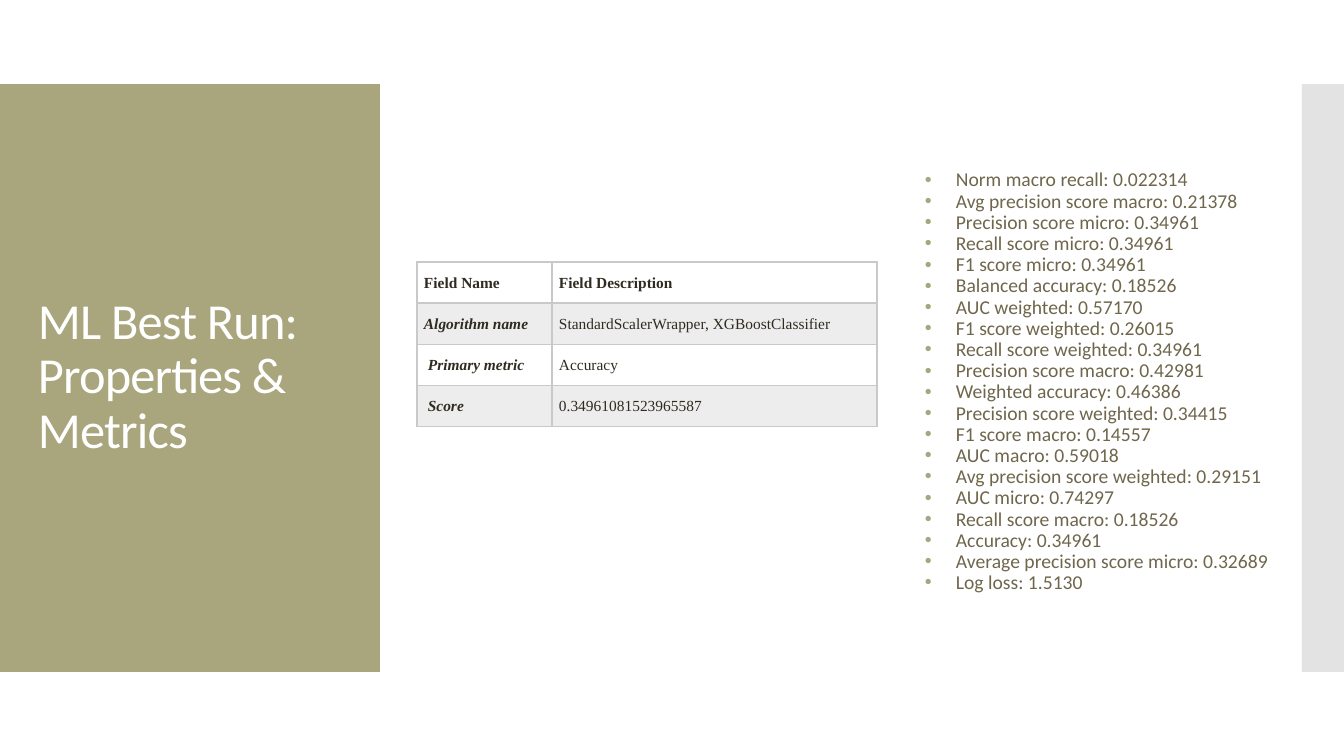
import lxml.etree
import pptx
import pptx.dml.color
import pptx.enum.shapes
import pptx.enum.text
import pptx.oxml.ns
import pptx.util

EMU_PER_PX = 914400 / 100.8
COLOURS = {
    "olive": "A9A57C",
    "strip": "C8C8C8",
    "title": "FFFFFF",
    "metric": "6F664C",
    "table_text": "2F2B20",
    "band": "EDEDED",
    "border": "C9C9C9",
}
PROPERTIES = [
    ("Field Name", "Field Description"),
    ("Algorithm name", "StandardScalerWrapper, XGBoostClassifier"),
    (" Primary metric", "Accuracy"),
    (" Score", "0.34961081523965587"),
]
METRICS = [
    "Norm macro recall: 0.022314",
    "Avg precision score macro: 0.21378",
    "Precision score micro: 0.34961",
    "Recall score micro: 0.34961",
    "F1 score micro: 0.34961",
    "Balanced accuracy: 0.18526",
    "AUC weighted: 0.57170",
    "F1 score weighted: 0.26015",
    "Recall score weighted: 0.34961",
    "Precision score macro: 0.42981",
    "Weighted accuracy: 0.46386",
    "Precision score weighted: 0.34415",
    "F1 score macro: 0.14557",
    "AUC macro: 0.59018",
    "Avg precision score weighted: 0.29151",
    "AUC micro: 0.74297",
    "Recall score macro: 0.18526",
    "Accuracy: 0.34961",
    "Average precision score micro: 0.32689",
    "Log loss: 1.5130",
]


def px(length):
    return pptx.util.Emu(round(length * EMU_PER_PX))


def colour(name):
    return pptx.dml.color.RGBColor.from_string(COLOURS[name])


def add_element(parent, tag, **attributes):
    element = lxml.etree.SubElement(parent, pptx.oxml.ns.qn(tag))
    for key, value in attributes.items():
        element.set(key, str(value))
    return element


def add_panel(slide, left, top, width, height, fill, opacity=100):
    shape = slide.shapes.add_shape(
        pptx.enum.shapes.MSO_SHAPE.RECTANGLE, px(left), px(top), px(width), px(height)
    )
    shape.shadow.inherit = False
    shape.fill.solid()
    shape.fill.fore_color.rgb = colour(fill)
    shape.line.fill.background()
    if opacity < 100:
        fill_colour = shape._element.spPr.find(".//" + pptx.oxml.ns.qn("a:srgbClr"))
        add_element(fill_colour, "a:alpha", val=opacity * 1000)


def format_font(font, name, size, fill, bold=False, italic=False):
    font.name = name
    font.size = pptx.util.Pt(size)
    font.color.rgb = colour(fill)
    font.bold = bold
    font.italic = italic


def add_text(slide, left, top, width, height, text, size, fill):
    shape = slide.shapes.add_textbox(px(left), px(top), px(width), px(height))
    text_frame = shape.text_frame
    text_frame.word_wrap = True
    text_frame.vertical_anchor = pptx.enum.text.MSO_ANCHOR.MIDDLE
    text_frame.text = text
    for paragraph in text_frame.paragraphs:
        paragraph.line_spacing = 0.9
        for run in paragraph.runs:
            format_font(run.font, "Calibri", size, fill)
    return text_frame


def add_title(slide):
    text_frame = add_text(
        slide, 28, 124, 325, 507, "ML Best Run: Properties & Metrics", 36, "title"
    )
    text_frame.paragraphs[0].runs[0]._r.get_or_add_rPr().set("spc", "-60")


def add_metrics(slide):
    text_frame = add_text(slide, 899, 100, 383, 564, "\n".join(METRICS), 14, "metric")
    for index, paragraph in enumerate(text_frame.paragraphs):
        paragraph.space_before = pptx.util.Pt(0 if index else 12)
        properties = paragraph._p.get_or_add_pPr()
        properties.set("marL", str(px(47)))
        properties.set("indent", str(px(-31)))
        bullet_colour = add_element(properties, "a:buClr")
        add_element(bullet_colour, "a:srgbClr", val=COLOURS["olive"])
        add_element(properties, "a:buFont", typeface="Arial")
        add_element(properties, "a:buChar", char="•")


def set_borders(cell, row):
    properties = cell._tc.get_or_add_tcPr()
    widths = {"L": 1, "R": 1, "T": 1.5 if row == 1 else 1, "B": 1.5 if row == 0 else 1}
    for position, (side, width) in enumerate(widths.items()):
        line = add_element(properties, "a:ln" + side, w=pptx.util.Pt(width))
        line_fill = add_element(line, "a:solidFill")
        add_element(line_fill, "a:srgbClr", val=COLOURS["border"])
        properties.insert(position, line)


def fill_cell(cell, row, column, text):
    cell.margin_left = cell.margin_right = px(7)
    cell.margin_top = cell.margin_bottom = px(10)
    if row % 2:
        cell.fill.solid()
        cell.fill.fore_color.rgb = colour("band")
    else:
        cell.fill.background()
    set_borders(cell, row)
    cell.text_frame.text = text
    paragraph = cell.text_frame.paragraphs[0]
    paragraph.line_spacing = 1.15
    paragraph.space_before = pptx.util.Pt(12)
    is_header = row == 0
    is_name = column == 0
    format_font(
        paragraph.runs[0].font,
        "Times New Roman",
        11,
        "table_text",
        bold=is_header or is_name,
        italic=is_name and not is_header,
    )


def add_properties_table(slide):
    column_widths = [135, 325]
    row_height = 40
    table = slide.shapes.add_table(
        len(PROPERTIES),
        len(column_widths),
        px(417),
        px(262),
        px(sum(column_widths)),
        px(row_height * len(PROPERTIES)),
    ).table
    table.first_row = False
    table.horz_banding = False
    for column, width in zip(table.columns, column_widths):
        column.width = px(width)
    for row, texts in enumerate(PROPERTIES):
        for column, text in enumerate(texts):
            fill_cell(table.cell(row, column), row, column, text)


def main():
    presentation = pptx.Presentation()
    presentation.slide_width = px(1344)
    presentation.slide_height = px(756)
    slide = presentation.slides.add_slide(presentation.slide_layouts[6])
    add_panel(slide, 0, 84, 380, 588, "olive")
    add_panel(slide, 1302, 84, 42, 588, "strip", opacity=50)
    add_title(slide)
    add_metrics(slide)
    add_properties_table(slide)
    presentation.save("out.pptx")


if __name__ == "__main__":
    main()
